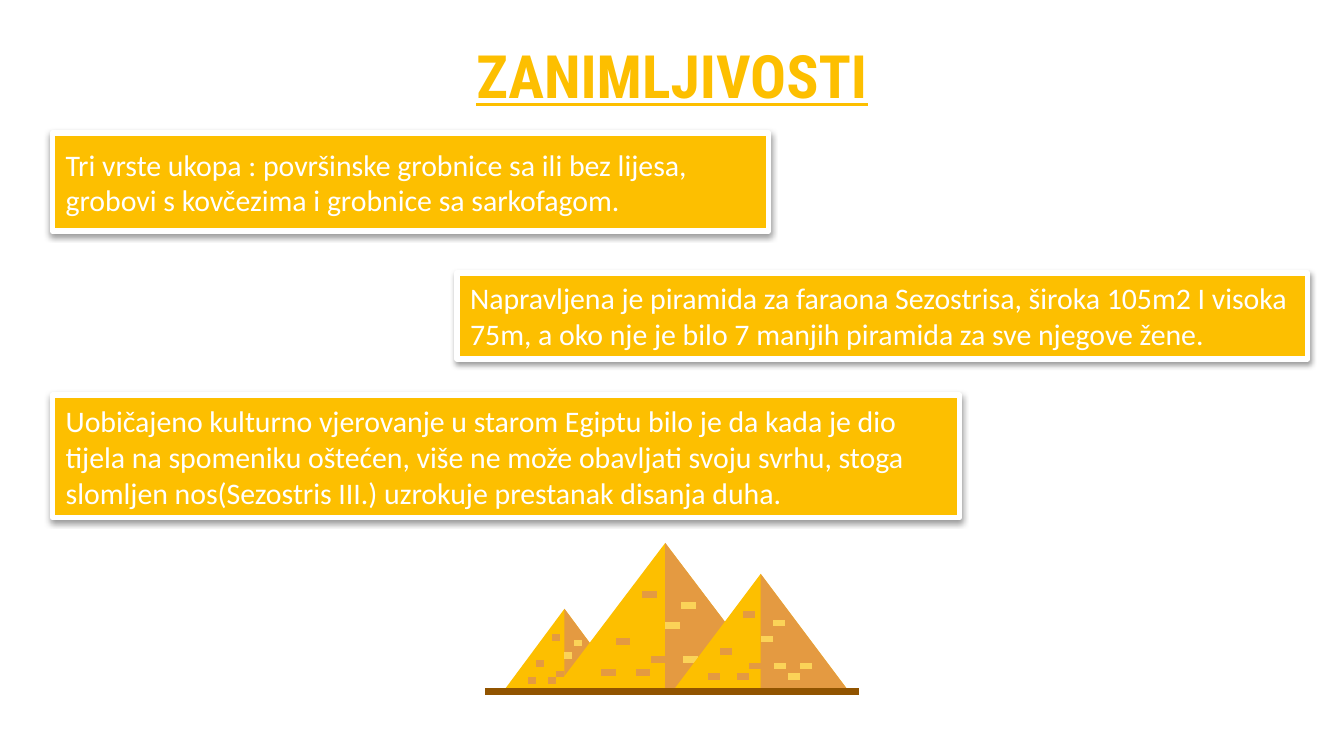
import pptx
import pptx.util
import pptx.dml.color
import pptx.enum.shapes
import pptx.enum.text
import lxml.etree

Inches, Pt = pptx.util.Inches, pptx.util.Pt
RGBColor = pptx.dml.color.RGBColor
MSO_ANCHOR = pptx.enum.text.MSO_ANCHOR
PP_ALIGN = pptx.enum.text.PP_ALIGN
RECT = pptx.enum.shapes.MSO_SHAPE.RECTANGLE

GOLD = RGBColor(0xFD, 0xBF, 0x00)
SHADE = RGBColor(0xE4, 0x9A, 0x41)
LIGHT = RGBColor(0xFB, 0xD3, 0x58)
BROWN = RGBColor(0x91, 0x54, 0x00)
WHITE = RGBColor(0xFF, 0xFF, 0xFF)

TITLE = "ZANIMLJIVOSTI"
FACTS = [
    (0.39, 0.99, 5.33, 0.73, 0.1,
     "Tri vrste ukopa :\u00a0površinske grobnice sa ili bez lijesa, "
     "grobovi s kovčezima i grobnice sa sarkofagom."),
    (3.4, 2.03, 6.33, 0.64, 0.05,
     "Napravljena je piramida za faraona Sezostrisa, široka 105m2 I visoka 75m, "
     "a oko nje\u00a0je bilo 7 manjih piramida za sve njegove žene."),
    (0.39, 2.94, 6.75, 0.91, 0.05,
     "Uobičajeno kulturno vjerovanje u starom Egiptu bilo je da kada je dio tijela "
     "na spomeniku oštećen, više ne može obavljati svoju svrhu, stoga slomljen "
     "nos(Sezostris III.) uzrokuje prestanak disanja duha."),
]
BASE = 5.15
BRICK_H = 0.05
PYRAMIDS = [
    {"apex": (4.2, 4.53), "half": 0.46, "brick": 0.06,
     "dark": [(4.14, 4.99), (4.08, 5.04), (3.93, 5.04), (3.99, 4.91), (4.11, 4.72)],
     "light": [(4.2, 4.85), (4.27, 4.76)]},
    {"apex": (4.95, 4.04), "half": 0.84, "brick": 0.11,
     "dark": [(4.84, 4.88), (4.73, 4.98), (4.47, 4.98), (4.58, 4.75), (4.78, 4.4)],
     "light": [(4.95, 4.63), (5.07, 4.48), (5.08, 4.88)]},
    {"apex": (5.66, 4.27), "half": 0.66, "brick": 0.09,
     "dark": [(5.57, 4.93), (5.48, 5.01), (5.27, 5.01), (5.36, 4.82), (5.53, 4.55)],
     "light": [(5.66, 4.73), (5.75, 4.61), (5.76, 4.93), (5.95, 4.93), (5.86, 5.01)]},
]
GROUND = (3.61, 5.12, 2.78, 0.05)
SHADOW = (
    '<a:effectLst xmlns:a="http://schemas.openxmlformats.org/drawingml/2006/main">'
    '<a:outerShdw blurRad="40000" dist="20000" dir="5400000" rotWithShape="0">'
    '<a:srgbClr val="000000"><a:alpha val="38000"/></a:srgbClr>'
    '</a:outerShdw></a:effectLst>'
)


def paint(sp, color):
    sp.shadow.inherit = False
    sp.fill.solid()
    sp.fill.fore_color.rgb = color
    sp.line.fill.background()


def add_rect(shapes, x, y, w, h, color):
    sp = shapes.add_shape(RECT, Inches(x), Inches(y), Inches(w), Inches(h))
    paint(sp, color)
    return sp


def add_outline(shapes, points, color):
    pts = [(Inches(x), Inches(y)) for x, y in points]
    fb = shapes.build_freeform(*pts[0])
    fb.add_line_segments(pts[1:], close=True)
    paint(fb.convert_to_shape(), color)


def add_block(shapes, x, y, w, h, color):
    add_outline(shapes, [(x + w, y + h), (x, y + h), (x, y), (x + w, y)], color)


def write(sp, text, size, font, color, inset, anchor, align):
    tf = sp.text_frame
    tf.word_wrap = True
    tf.vertical_anchor = anchor
    tf.margin_left = tf.margin_right = Inches(0.1)
    tf.margin_top = tf.margin_bottom = Inches(inset)
    tf.text = text
    p = tf.paragraphs[0]
    p.alignment = align
    r = p.runs[0]
    r.font.size = Pt(size)
    r.font.name = font
    r.font.color.rgb = color
    return r


def add_fact(shapes, x, y, w, h, inset, text):
    sp = add_rect(shapes, x, y, w, h, GOLD)
    sp.line.color.rgb = WHITE
    sp.line.width = Pt(3)
    spPr = sp._element.spPr
    spPr.replace(spPr.find("{*}effectLst"), lxml.etree.fromstring(SHADOW))
    write(sp, text, 16, "Calibri", WHITE, inset, MSO_ANCHOR.MIDDLE, PP_ALIGN.LEFT)


def add_pyramid(shapes, pyramid):
    x, y = pyramid["apex"]
    half = pyramid["half"]
    add_outline(shapes, [(x + half, BASE), (x - half, BASE), (x, y)], GOLD)
    add_outline(shapes, [(x + half, BASE), (x, BASE), (x, y)], SHADE)
    for key, color in (("dark", SHADE), ("light", LIGHT)):
        for bx, by in pyramid[key]:
            add_block(shapes, bx, by, pyramid["brick"], BRICK_H, color)


def main():
    prs = pptx.Presentation()
    prs.slide_width = Inches(10)
    prs.slide_height = prs.slide_width * 9 // 16
    s = prs.slides.add_slide(prs.slide_layouts[6])

    title = s.shapes.add_textbox(Inches(0.5), Inches(0.19), Inches(9), Inches(0.63))
    r = write(title, TITLE, 32, "Roboto Condensed", GOLD, 0.1,
              MSO_ANCHOR.TOP, PP_ALIGN.CENTER)
    r.font.bold = r.font.underline = True

    add_fact(s.shapes, *FACTS[0])
    group = s.shapes.add_group_shape()
    for pyramid in PYRAMIDS:
        add_pyramid(group.shapes, pyramid)
    add_block(group.shapes, *GROUND, BROWN)
    for fact in FACTS[1:]:
        add_fact(s.shapes, *fact)
    prs.save("out.pptx")


if __name__ == "__main__":
    main()
